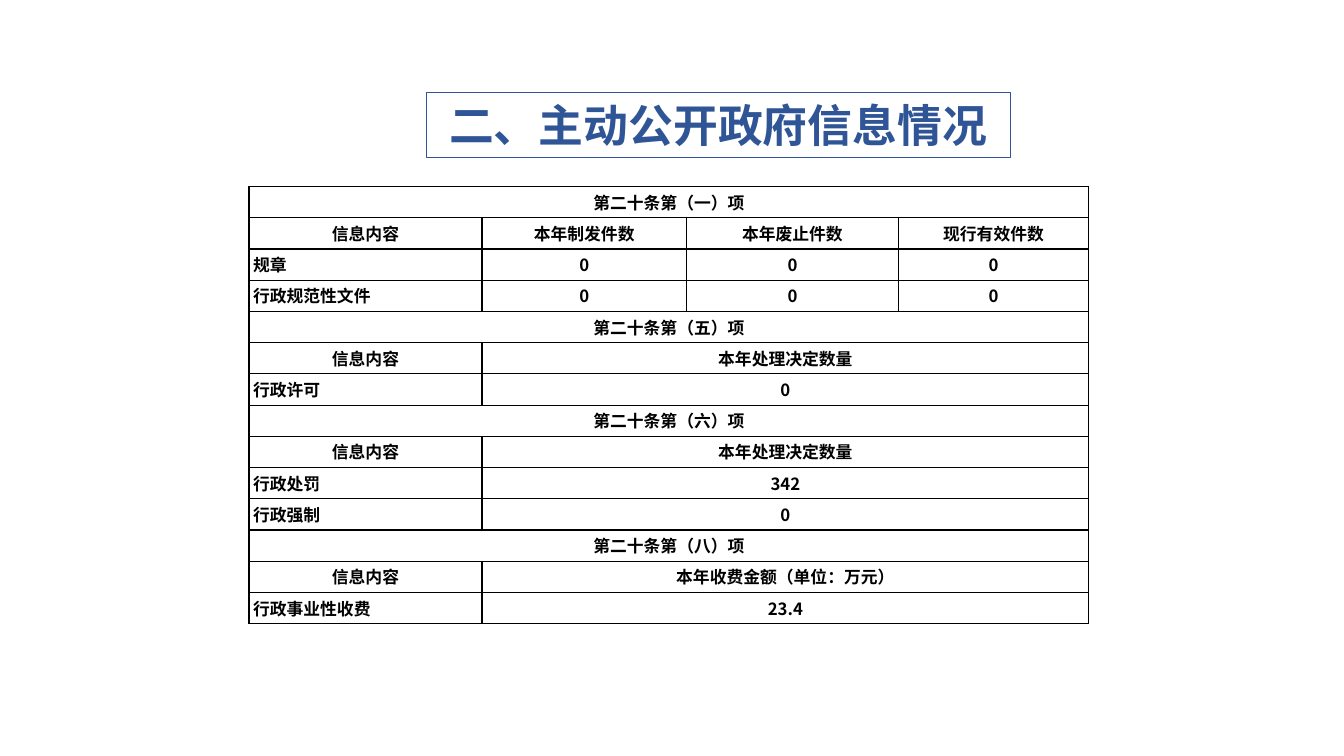
from lxml.etree import SubElement
from pptx import Presentation
from pptx.dml.color import RGBColor
from pptx.enum.text import MSO_ANCHOR, MSO_AUTO_SIZE, PP_ALIGN
from pptx.oxml.ns import qn
from pptx.util import Inches, Pt

COLORS = {"title": "2F5597", "text": "000000", "border": "000000", "cell": "FFFFFF"}
CJK = "Noto Sans CJK SC"
SERIF = "Times New Roman"


def write(tf, text, size=12, font=SERIF, color="text", align=PP_ALIGN.CENTER, spacing=None):
    tf.vertical_anchor = MSO_ANCHOR.MIDDLE
    p = tf.paragraphs[0]
    p.alignment = align
    p.line_spacing = spacing
    r = p.add_run()
    r.text = text
    r.font.size = Pt(size)
    r.font.bold = True
    r.font.name = font
    r.font.color.rgb = RGBColor.from_string(COLORS[color])
    SubElement(r.font._element, qn("a:ea"), typeface=CJK)


def add_borders(cell):
    tcPr = cell._tc.get_or_add_tcPr()
    for side in ("a:lnL", "a:lnR", "a:lnT", "a:lnB"):
        ln = SubElement(tcPr, qn(side), w=str(Pt(1)))
        fill = SubElement(ln, qn("a:solidFill"))
        SubElement(fill, qn("a:srgbClr"), val=COLORS["border"])


prs = Presentation()
prs.slide_width = Inches(13.33)
prs.slide_height = Inches(7.5)
s = prs.slides.add_slide(prs.slide_layouts[5])

title = s.shapes.title
title.left, title.top = Inches(4.23), Inches(0.92)
title.width, title.height = Inches(5.79), Inches(0.64)
title.line.color.rgb = RGBColor.from_string(COLORS["title"])
title.line.width = Pt(0.75)
tf = title.text_frame
tf.word_wrap = True
tf.auto_size = MSO_AUTO_SIZE.NONE
write(tf, "二、主动公开政府信息情况", size=32, font=CJK, color="title")

# A row with fewer than four entries spans its last entry to the right edge
rows = [
    ["第二十条第（一）项"],
    ["信息内容", "本年制发件数", "本年废止件数", "现行有效件数"],
    ["规章", "0", "0", "0"],
    ["行政规范性文件", "0", "0", "0"],
    ["第二十条第（五）项"],
    ["信息内容", "本年处理决定数量"],
    ["行政许可", "0"],
    ["第二十条第（六）项"],
    ["信息内容", "本年处理决定数量"],
    ["行政处罚", "342"],
    ["行政强制", "0"],
    ["第二十条第（八）项"],
    ["信息内容", "本年收费金额（单位：万元）"],
    ["行政事业性收费", "23.4"],
]
col_widths = [2.31, 2.03, 2.1, 1.89]
last_col = len(col_widths) - 1

table = s.shapes.add_table(
    len(rows), len(col_widths), Inches(2.47), Inches(1.85), Inches(8.33), Inches(4.34)
).table
table.first_row = False
table.horz_banding = False
for column, width in zip(table.columns, col_widths):
    column.width = Inches(width)

for i, row in enumerate(rows):
    for cell in table.rows[i].cells:
        cell.margin_left = cell.margin_right = Inches(0.04)
        cell.margin_top = cell.margin_bottom = 0
        cell.vertical_anchor = MSO_ANCHOR.MIDDLE
        add_borders(cell)
        cell.fill.solid()
        cell.fill.fore_color.rgb = RGBColor.from_string(COLORS["cell"])
    if len(row) <= last_col:
        table.cell(i, len(row) - 1).merge(table.cell(i, last_col))
    is_data = row[-1][0].isdigit()
    for j, text in enumerate(row):
        write(
            table.cell(i, j).text_frame,
            text,
            font=CJK if text[0].isdigit() else SERIF,
            align=PP_ALIGN.LEFT if is_data and j == 0 else PP_ALIGN.CENTER,
            spacing=Pt(17),
        )

prs.save("out.pptx")
